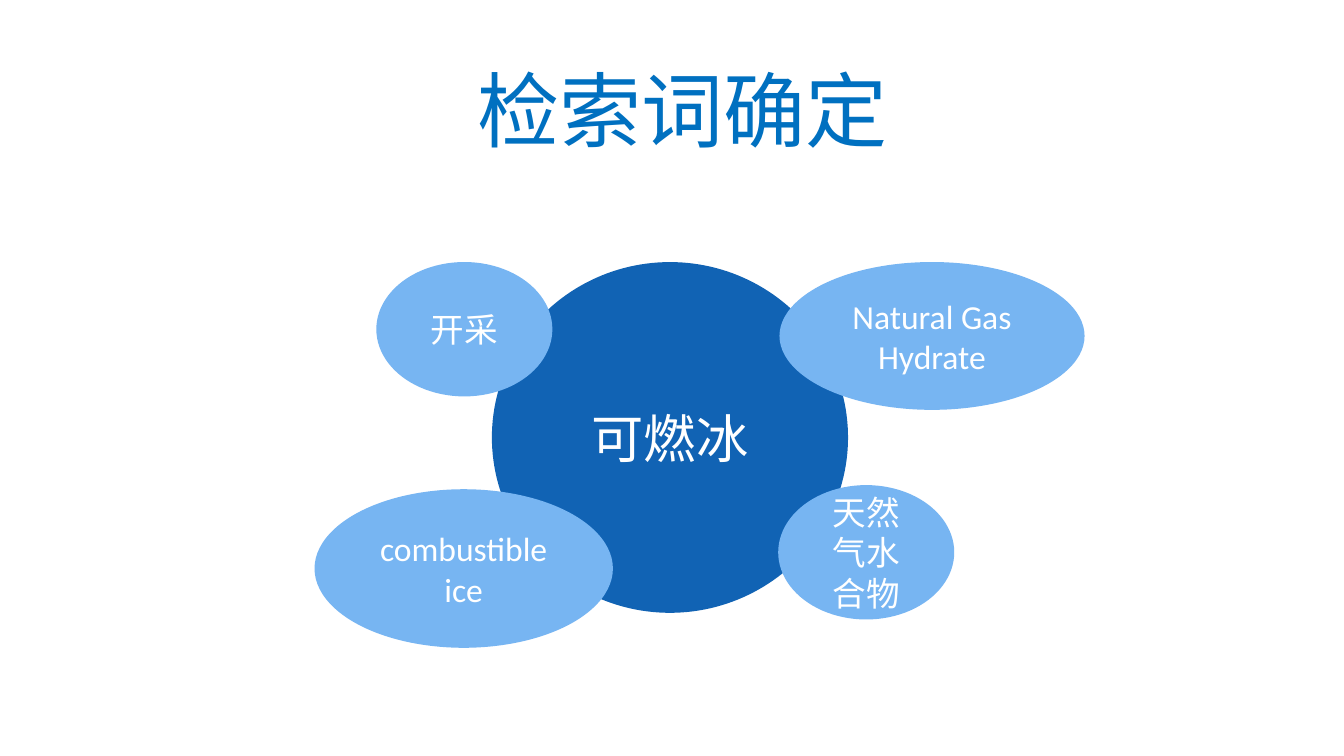
from pptx import Presentation
from pptx.dml.color import RGBColor
from pptx.enum import shapes, text
from pptx.oxml import ns
from pptx.util import Inches, Pt
from lxml import etree

WHITE = RGBColor(0xFF, 0xFF, 0xFF)
NAVY = RGBColor(0x11, 0x63, 0xB4)
SKY = RGBColor(0x77, 0xB5, 0xF2)
BLUE = RGBColor(0x00, 0x70, 0xC0)
HAN = "Noto Sans CJK SC"
TERMS = [
    ("Natural Gas Hydrate", (5.8, 1.95, 2.27, 1.1)),
    ("开采", (2.8, 1.95, 1.31, 1)),
    ("天然气水合物", (5.79, 3.61, 1.31, 1)),
    ("combustible ice", (2.34, 3.64, 2.22, 1.18)),
]


def write(shape, words, size=18, color=WHITE, font="Calibri",
          align=text.PP_ALIGN.CENTER):
    frame = shape.text_frame
    frame.word_wrap = True
    frame.auto_size = text.MSO_AUTO_SIZE.NONE
    frame.vertical_anchor = text.MSO_ANCHOR.MIDDLE
    para = frame.paragraphs[0]
    para.alignment = align
    para.line_spacing = 1.0
    run = para.add_run()
    run.text = words
    run.font.size = Pt(size)
    run.font.name = font
    run.font.color.rgb = color
    east = etree.SubElement(run.font._element, ns.qn("a:ea"))
    east.set("typeface", HAN)


class Deck:
    def __init__(self):
        self.show = Presentation()
        self.show.slide_width = Inches(10)
        self.show.slide_height = Inches(10 * 9 / 16)
        self.slide = self.show.slides.add_slide(self.show.slide_layouts[5])

    def title(self, words, box):
        head = self.slide.shapes.title
        head.left, head.top, head.width, head.height = map(Inches, box)
        write(head, words, size=44, color=BLUE, font=HAN,
              align=text.PP_ALIGN.LEFT)

    def oval(self, words, box, fill=SKY, size=18):
        shape = self.slide.shapes.add_shape(
            shapes.MSO_SHAPE.OVAL, *map(Inches, box))
        shape.shadow.inherit = False
        shape.fill.solid()
        shape.fill.fore_color.rgb = fill
        shape.line.fill.background()
        write(shape, words, size=size)


def main():
    deck = Deck()
    deck.title("检索词确定", (3.45, 0.39, 3.36, 0.84))
    deck.oval("可燃冰", (3.66, 1.95, 2.65, 2.61), fill=NAVY, size=28)
    for words, box in TERMS:
        deck.oval(words, box)
    deck.show.save("out.pptx")


if __name__ == "__main__":
    main()
